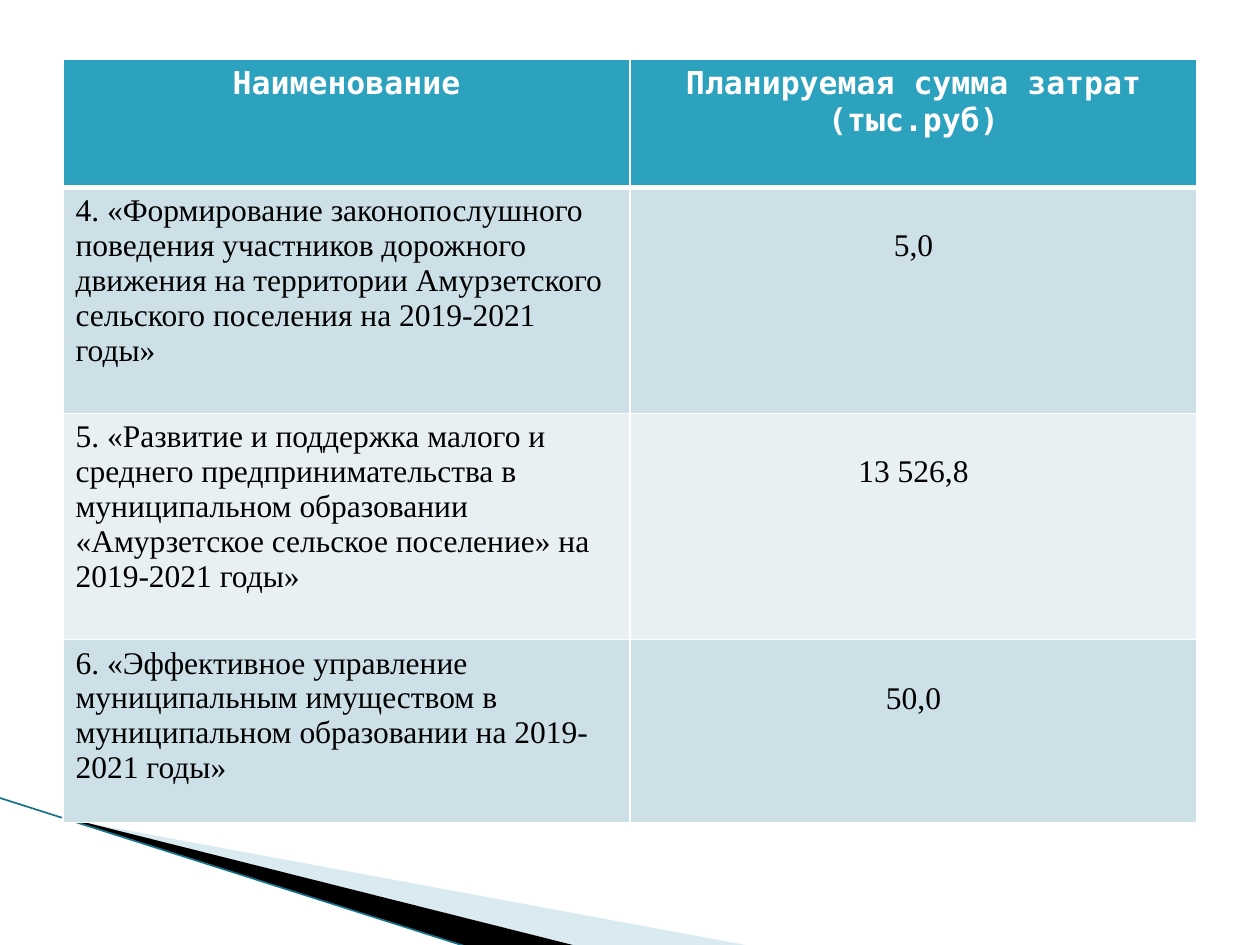
from typing import NamedTuple

from lxml.etree import SubElement
from pptx import Presentation
from pptx.dml.color import RGBColor as RGB
from pptx.enum.shapes import MSO_CONNECTOR as CONN
from pptx.enum.text import PP_ALIGN as ALIGN
from pptx.oxml import parse_xml
from pptx.oxml.ns import nsdecls, qn
from pptx.util import Pt

COLORS = {
    "white": "FFFFFF", "black": "000000", "header": "2DA2BF",
    "band_dark": "CDE0E8", "band_light": "E8F0F4",
    "wedge": "A0CBDC", "stroke": "16718A",
}
HEADER_FONT = {"name": "DejaVu Sans Mono", "size": Pt(18), "bold": True}
BODY_FONT = {"name": "Times New Roman", "size": Pt(18), "bold": False}
COL_WIDTH = 324
ROW_HEIGHTS = (73.1, 129.2, 129.4, 104.4)
VALUE_TOP = 23.6  # sets each sum level with the second line of its name


class Wedge(NamedTuple):
    frame: tuple[float, float, float, float]
    points: list[tuple[float, float]]
    color: str
    opacity: int


class Programme(NamedTuple):
    name: str
    cost: str


WEDGES = [
    Wedge((56.2, 393.8, 299.5, 113.8),
          [(39.6, 468.4), (428.7, 540.5), (328.3, 540.5), (39.6, 468)], "wedge", 40),
    Wedge((-4.3, 455.8, 299.5, 66.2),
          [(38.2, 467.3), (329.3, 540.5), (267.8, 541.2), (38.9, 468)], "black", 100),
]
HEADINGS = Programme("Наименование", "Планируемая сумма затрат (тыс.руб)")
PROGRAMMES = [
    Programme("4. «Формирование законопослушного поведения участников дорожного "
              "движения на территории Амурзетского сельского поселения "
              "на 2019-2021 годы»", "5,0"),
    Programme("5. «Развитие и поддержка малого и среднего предпринимательства "
              "в муниципальном образовании «Амурзетское сельское поселение» "
              "на 2019-2021 годы»", "13 526,8"),
    Programme("6. «Эффективное управление муниципальным имуществом "
              "в муниципальном образовании на 2019-2021 годы»", "50,0"),
]


def rgb(name: str) -> RGB:
    return RGB.from_string(COLORS[name])


def set_frame(sp, frame: tuple[float, float, float, float]) -> None:
    """Give the outline a frame of its own without moving its points."""
    left, top, width, height = (Pt(v) for v in frame)
    dx, dy = sp.left - left, sp.top - top
    outline = next(sp._element.iter(qn("a:path")))
    outline.set("w", str(width))
    outline.set("h", str(height))
    for pt in outline.iter(qn("a:pt")):
        pt.set("x", str(int(pt.get("x")) + dx))
        pt.set("y", str(int(pt.get("y")) + dy))
    sp.left, sp.top, sp.width, sp.height = left, top, width, height


def draw_wedge(s, wedge: Wedge) -> None:
    points = [(Pt(x), Pt(y)) for x, y in wedge.points]
    builder = s.shapes.build_freeform(*points[0])
    builder.add_line_segments(points[1:], close=True)
    sp = builder.convert_to_shape()
    set_frame(sp, wedge.frame)
    sp.shadow.inherit = False
    sp.line.fill.background()
    sp.fill.solid()
    sp.fill.fore_color.rgb = rgb(wedge.color)
    if wedge.opacity < 100:
        clr = sp._element.spPr.find(qn("a:solidFill"))[0]
        SubElement(clr, qn("a:alpha"), val=str(wedge.opacity * 1000))


def draw_stroke(s) -> None:
    ends = [Pt(v) for v in (-0.7, 455.8, 267.4, 541.2)]
    line = s.shapes.add_connector(CONN.STRAIGHT, *ends)
    line.line.color.rgb = rgb("stroke")
    line.line.width = Pt(0.95)
    SubElement(line._element.spPr, qn("a:effectLst"))


def set_borders(cell, row: int) -> None:
    """White grid, thicker between the header and the body."""
    widths = {"L": 1, "R": 1, "T": 3 if row == 1 else 1, "B": 3 if row == 0 else 1}
    tc_pr = cell._tc.get_or_add_tcPr()
    for i, (side, width) in enumerate(widths.items()):
        tc_pr.insert(i, parse_xml(
            f'<a:ln{side} {nsdecls("a")} w="{Pt(width)}"><a:solidFill>'
            f'<a:srgbClr val="{COLORS["white"]}"/></a:solidFill></a:ln{side}>'))


def fill_cell(cell, text: str, row: int, col: int) -> None:
    header = row == 0
    fill = "header" if header else "band_dark" if row % 2 else "band_light"
    cell.fill.solid()
    cell.fill.fore_color.rgb = rgb(fill)
    set_borders(cell, row)
    if col == 1 and not header:
        cell.margin_top = Pt(VALUE_TOP)
    p = cell.text_frame.paragraphs[0]
    p.alignment = ALIGN.CENTER if header or col == 1 else ALIGN.LEFT
    r = p.add_run()
    r.text = text
    for key, value in (HEADER_FONT if header else BODY_FONT).items():
        setattr(r.font, key, value)
    r.font.color.rgb = rgb("white" if header else "black")


def draw_table(s, rows: list[Programme]) -> None:
    frame = s.shapes.add_table(len(rows), 2, Pt(36), Pt(33.9), Pt(2 * COL_WIDTH),
                               Pt(sum(ROW_HEIGHTS)))
    table = frame.table
    for column in table.columns:
        column.width = Pt(COL_WIDTH)
    for i, (height, programme) in enumerate(zip(ROW_HEIGHTS, rows)):
        table.rows[i].height = Pt(height)
        for j, text in enumerate(programme):
            fill_cell(table.cell(i, j), text, i, j)


def main() -> None:
    prs = Presentation()
    prs.slide_width, prs.slide_height = Pt(720), Pt(540)
    s = prs.slides.add_slide(prs.slide_layouts[6])
    for wedge in WEDGES:
        draw_wedge(s, wedge)
    draw_stroke(s)
    draw_table(s, [HEADINGS, *PROGRAMMES])
    prs.save("out.pptx")


if __name__ == "__main__":
    main()
